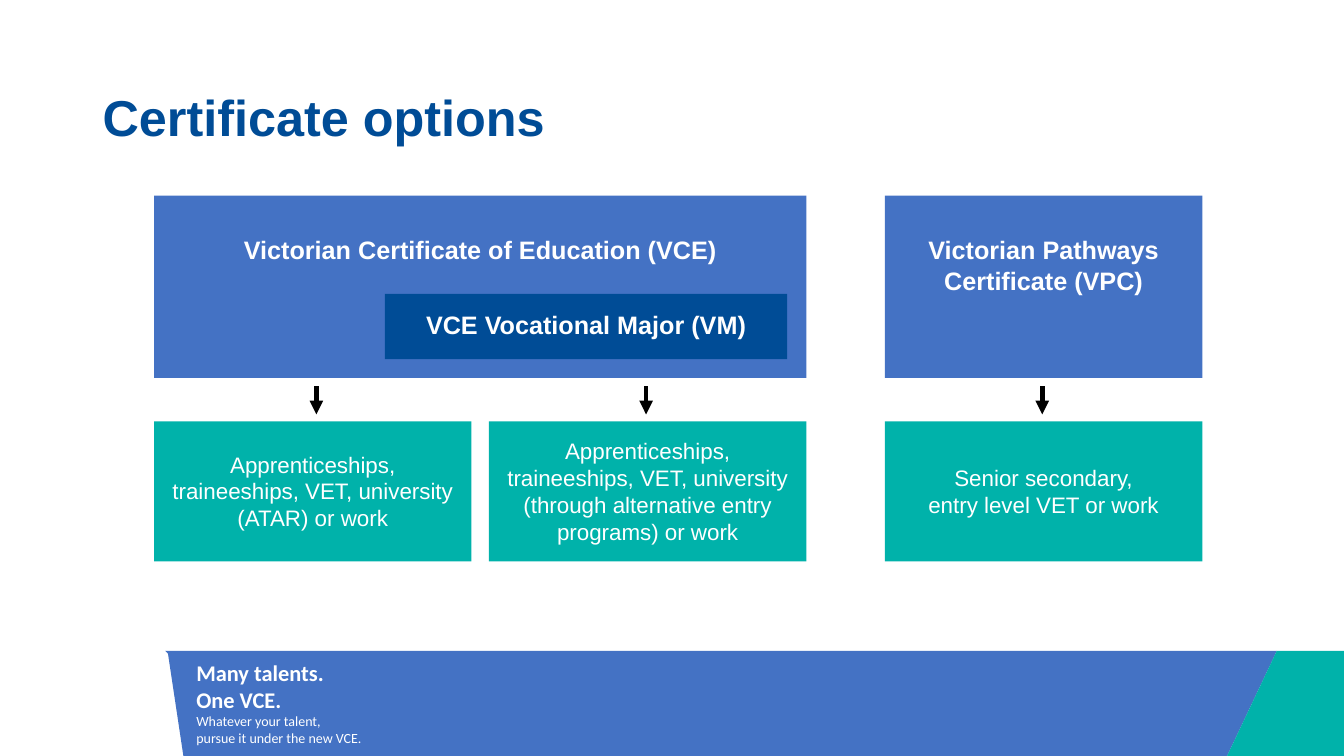
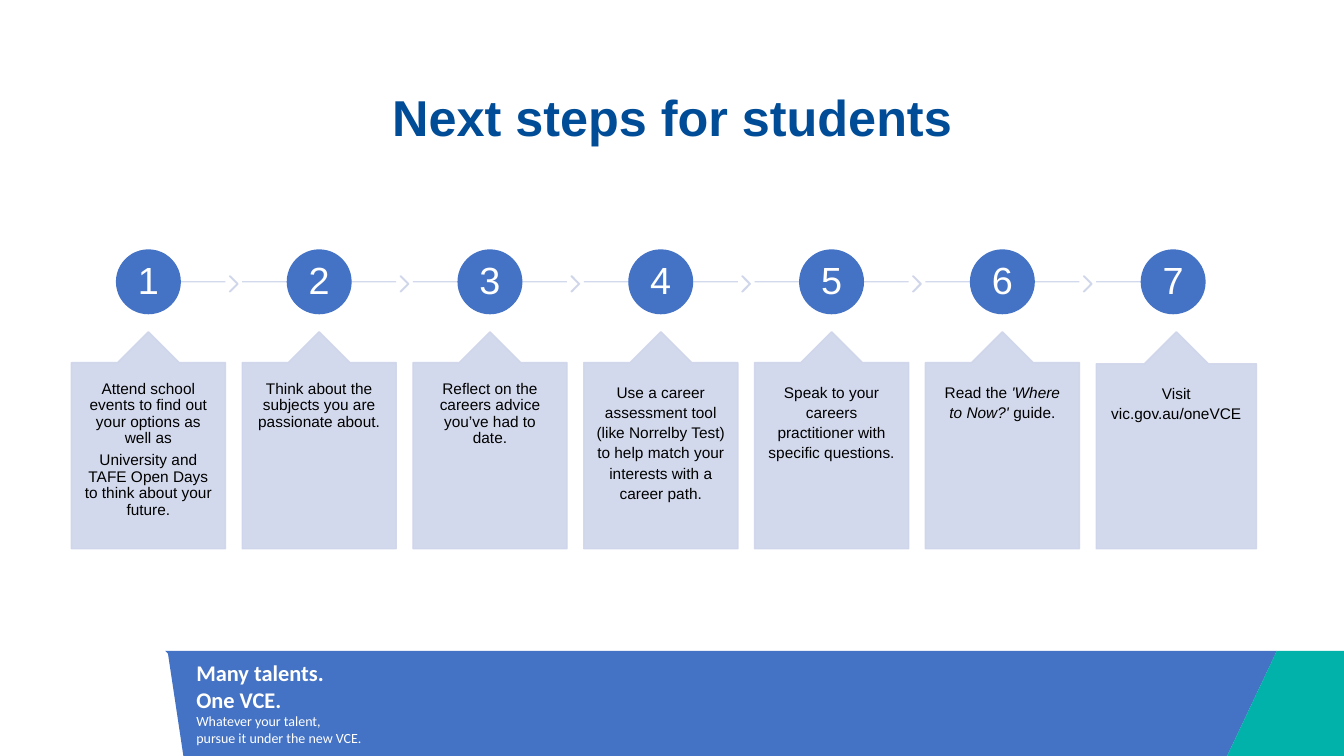
"""Build two slides on certificate options and the next steps for students."""

from dataclasses import dataclass

from lxml import etree
from pptx import Presentation
from pptx.dml.color import RGBColor
from pptx.enum import shapes, text
from pptx.oxml import ns
from pptx.util import Pt


@dataclass(frozen=True)
class Theme:
    navy: str = "004C96"
    blue: str = "4472C4"
    teal: str = "00B2AA"
    pale: str = "CFD5EA"
    white: str = "FFFFFF"
    black: str = "000000"
    font: str = "Arial"
    footer_font: str = "Calibri"
    title_size: float = 36
    number_size: float = 27
    heading_size: float = 18
    body_size: float = 16
    step_size: float = 11
    motto_size: float = 16
    tagline_size: float = 10
    pale_opacity: int = 90


THEME = Theme()


@dataclass(frozen=True)
class Area:
    left: float
    top: float
    width: float
    height: float

    def points(self) -> tuple:
        return Pt(self.left), Pt(self.top), Pt(self.width), Pt(self.height)


@dataclass(frozen=True)
class TextStyle:
    size: float
    color: str = THEME.white
    bold: bool = False
    font: str = THEME.font
    align: text.PP_ALIGN = text.PP_ALIGN.CENTER
    line_spacing: float = 1.0
    space_after: float = 0


@dataclass(frozen=True)
class Box:
    wording: str
    area: Area
    fill: str
    style: TextStyle
    anchor: text.MSO_ANCHOR
    inset_top: float


@dataclass(frozen=True)
class Step:
    paragraphs: tuple[str, ...]
    line_spacing: float = 1.1
    width: float = 110


HEADING = TextStyle(THEME.heading_size, bold=True)
BODY = TextStyle(THEME.body_size)
NUMBER = TextStyle(THEME.number_size, line_spacing=0.9)
MOTTO = TextStyle(THEME.motto_size, bold=True, font=THEME.footer_font, align=text.PP_ALIGN.LEFT)
TAGLINE = TextStyle(THEME.tagline_size, font=THEME.footer_font, align=text.PP_ALIGN.LEFT)
TOP, MIDDLE = text.MSO_ANCHOR.TOP, text.MSO_ANCHOR.MIDDLE

FOOTER_SHAPES = (
    (THEME.blue, ((118, 465), (912, 465), (876.5, 540), (131, 540), (120, 467))),
    (THEME.teal, ((912, 465), (960, 465), (960, 540), (876.5, 540))),
)
FOOTER_LINES = (
    ("Many talents.", MOTTO),
    ("One VCE.", MOTTO),
    ("Whatever your talent,", TAGLINE),
    ("pursue it under the new VCE.", TAGLINE),
)


def certificate(wording: str, left: float, width: float) -> Box:
    return Box(wording, Area(left, 139.7, width, 130.3), THEME.blue, HEADING, TOP, 28)


def pathway(wording: str, left: float) -> Box:
    return Box(wording, Area(left, 301, 226.8, 100), THEME.teal, BODY, MIDDLE, 3)


BOXES = (
    certificate("Victorian Certificate of Education (VCE)", 110, 466),
    certificate("Victorian Pathways Certificate (VPC)", 632, 226.8),
    Box("VCE Vocational Major (VM)", Area(275, 210, 287.3, 46.6), THEME.navy, HEADING, MIDDLE, 0),
    pathway("Apprenticeships, traineeships, VET, university (ATAR) or work", 110),
    pathway(
        "Apprenticeships, traineeships, VET, university (through alternative entry programs) or work",
        349.2,
    ),
    pathway("Senior secondary,\nentry level VET or work", 632),
)
ARROW_CENTERS = (226, 461.5, 744.5)

STEPS = (
    Step(
        (
            "Attend school events to find out your options as well as",
            "University and TAFE Open Days to think about your future.",
        ),
        0.9,
    ),
    Step(("Think about the subjects you are passionate about.",), 0.9),
    Step(("Reflect on the careers advice you’ve had to date.",), 0.9),
    Step(
        (
            "Use a career assessment tool (like Norrelby Test) "
            "to help match your interests with a career path.",
        )
    ),
    Step(("Speak to your careers practitioner with specific questions.",)),
    Step(("Read the *'Where to Now?' *guide.",)),
    Step(("Visit vic.gov.au/oneVCE",), width=114.5),
)
STEP_LEFT, STEP_PITCH, STEP_WIDTH = 51, 122, 110
RAIL_Y, CIRCLE_SIZE = 201.3, 45.4


def color(value: str) -> RGBColor:
    return RGBColor.from_string(value)


def write(paragraph, wording: str, style: TextStyle) -> None:
    """Fill a paragraph, setting the parts between asterisks in italics."""
    if "*" in wording:
        for index, part in enumerate(wording.split("*")):
            run = paragraph.add_run()
            run.text = part
            run.font.italic = index % 2 == 1
    else:
        paragraph.text = wording
    paragraph.alignment = style.align
    paragraph.line_spacing = style.line_spacing
    paragraph.space_after = Pt(style.space_after)
    font = paragraph.font
    font.name, font.size, font.bold = style.font, Pt(style.size), style.bold
    font.color.rgb = color(style.color)


def fill_text(shape, lines, anchor=TOP, insets=(7.2, 3.6, 7.2, 3.6)) -> None:
    """Write (wording, style) lines; insets run left, top, right, bottom."""
    frame = shape.text_frame
    frame.word_wrap = True
    frame.vertical_anchor = anchor
    frame.margin_left, frame.margin_top, frame.margin_right, frame.margin_bottom = map(Pt, insets)
    for index, (wording, style) in enumerate(lines):
        paragraph = frame.add_paragraph() if index else frame.paragraphs[0]
        write(paragraph, wording, style)


def paint(shape, fill: str, outlined: bool = False) -> None:
    shape.shadow.inherit = False
    shape.fill.solid()
    shape.fill.fore_color.rgb = color(fill)
    if outlined:
        shape.line.color.rgb = color(fill)
        shape.line.width = Pt(1)
    else:
        shape.line.fill.background()


def add_preset(slide, kind, area: Area, fill: str, outlined: bool = False):
    shape = slide.shapes.add_shape(kind, *area.points())
    paint(shape, fill, outlined)
    return shape


def make_translucent(shape) -> None:
    for element in shape._element.spPr.iter(ns.qn("a:srgbClr")):
        etree.SubElement(element, ns.qn("a:alpha"), val=str(THEME.pale_opacity * 1000))


def add_line(slide, start, end, line_color: str, width: float, arrow: bool = False):
    """Draw a straight line without shadow, with an optional arrowhead at its end."""
    kind = shapes.MSO_CONNECTOR.STRAIGHT
    connector = slide.shapes.add_connector(kind, *map(Pt, (*start, *end)))
    connector.line.color.rgb = color(line_color)
    connector.line.width = Pt(width)
    if arrow:
        etree.SubElement(connector.line._get_or_add_ln(), ns.qn("a:tailEnd"), type="triangle")
    etree.SubElement(connector._element.spPr, ns.qn("a:effectLst"))
    return connector


def add_base_slide(presentation, title: str, align: text.PP_ALIGN):
    """Add a blank slide with the shared footer and title."""
    slide = presentation.slides.add_slide(presentation.slide_layouts[6])
    for fill, corners in FOOTER_SHAPES:
        builder = slide.shapes.build_freeform(*map(Pt, corners[0]))
        builder.add_line_segments([(Pt(x), Pt(y)) for x, y in corners[1:]])
        paint(builder.convert_to_shape(), fill)
    motto = slide.shapes.add_textbox(*Area(133.2, 467.3, 340, 70.6).points())
    fill_text(motto, FOOTER_LINES)
    heading = slide.shapes.add_textbox(*Area(66.2, 28.8, 828, 104.4).points())
    style = TextStyle(THEME.title_size, THEME.navy, True, align=align, line_spacing=1.1)
    fill_text(heading, [(title, style)], MIDDLE)
    return slide


def build_options(presentation) -> None:
    slide = add_base_slide(presentation, "Certificate options", text.PP_ALIGN.LEFT)
    for box in BOXES:
        shape = add_preset(slide, shapes.MSO_SHAPE.RECTANGLE, box.area, box.fill)
        fill_text(shape, [(box.wording, box.style)], box.anchor, (7.2, box.inset_top, 7.2, 3.6))
    for center in ARROW_CENTERS:
        add_line(slide, (center, 275.8), (center, 296), THEME.black, 3.25, arrow=True)


def add_step(slide, index: int, step: Step) -> None:
    """Draw one step: its rail, chevron, numbered circle and callout."""
    left = STEP_LEFT + index * STEP_PITCH
    center = left + STEP_WIDTH / 2
    is_last = index == len(STEPS) - 1
    rail_start = left if index else center
    rail_end = center if is_last else left + STEP_WIDTH
    rail = add_line(slide, (rail_start, RAIL_Y), (rail_end, RAIL_Y), THEME.pale, 1)
    make_translucent(rail)
    if not is_last:
        area = Area(left + 113, 197.3, 6, 11)
        chevron = add_preset(slide, shapes.MSO_SHAPE.CHEVRON, area, THEME.pale, True)
        chevron.adjustments[0] = 0.9
        make_translucent(chevron)

    radius = CIRCLE_SIZE / 2
    area = Area(center - radius, RAIL_Y - radius, CIRCLE_SIZE, CIRCLE_SIZE)
    circle = add_preset(slide, shapes.MSO_SHAPE.OVAL, area, THEME.blue, True)
    fill_text(circle, [(str(index + 1), NUMBER)], MIDDLE, (1.5,) * 4)

    area = Area(left, 237, step.width, 155)
    callout = add_preset(slide, shapes.MSO_SHAPE.UP_ARROW_CALLOUT, area, THEME.pale, True)
    for position, value in enumerate((0.5, 0.2, 0.2, 1.0)):
        callout.adjustments[position] = value
    make_translucent(callout)
    style = TextStyle(
        THEME.step_size, THEME.black, line_spacing=step.line_spacing, space_after=3.5
    )
    fill_text(callout, [(line, style) for line in step.paragraphs], TOP, (9, 13, 9, 13))


def build_steps(presentation) -> None:
    slide = add_base_slide(presentation, "Next steps for students", text.PP_ALIGN.CENTER)
    for index, step in enumerate(STEPS):
        add_step(slide, index, step)


def main() -> None:
    presentation = Presentation()
    presentation.slide_width, presentation.slide_height = Pt(960), Pt(540)
    build_options(presentation)
    build_steps(presentation)
    presentation.save("out.pptx")


if __name__ == "__main__":
    main()
